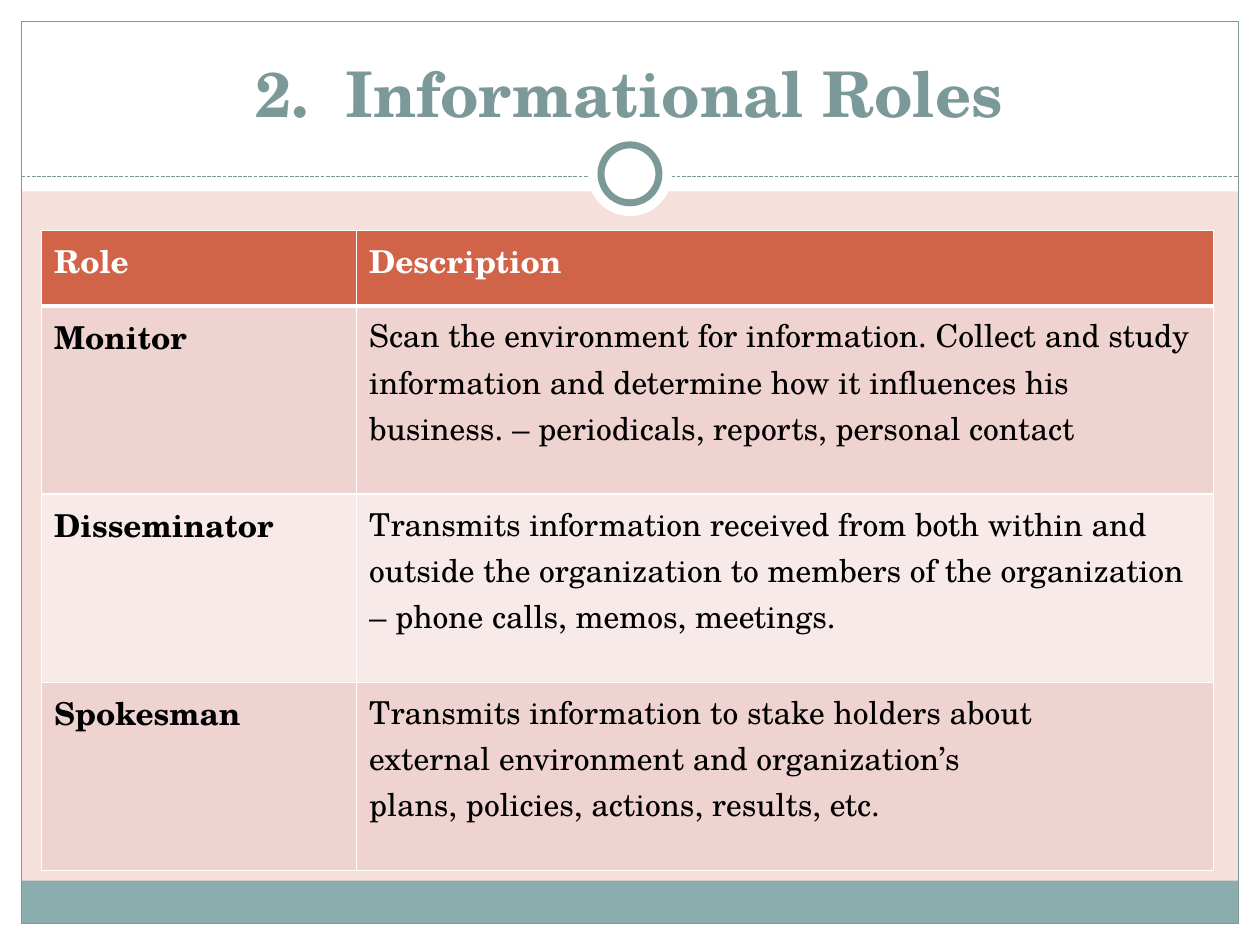
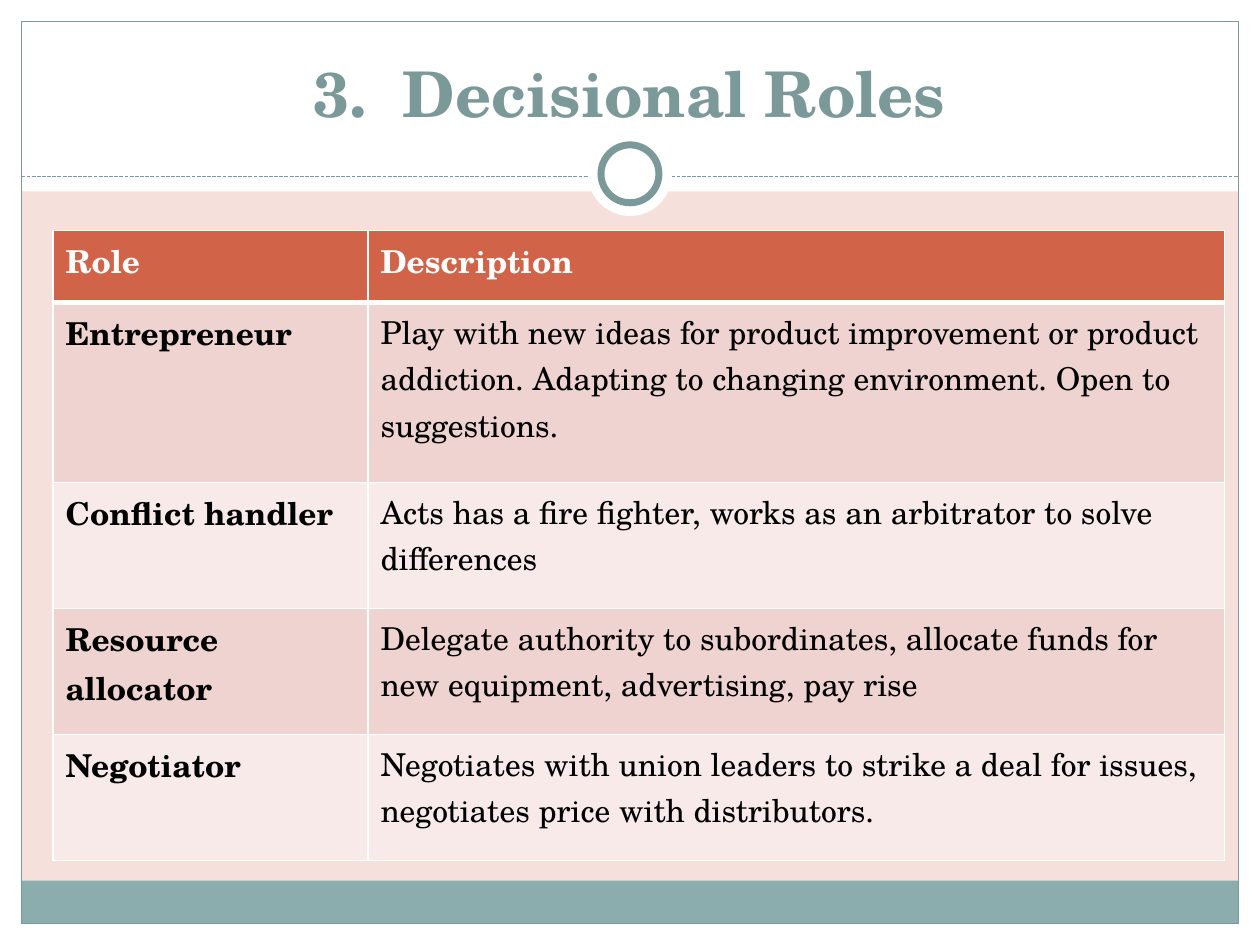
"""Build two table slides on managerial roles."""

from dataclasses import dataclass

import lxml.etree
import pptx
import pptx.dml.color
import pptx.enum.dml
import pptx.enum.shapes
import pptx.enum.text
import pptx.oxml
import pptx.oxml.ns
import pptx.util

SLIDES = [
    {
        "title": "2.  Informational Roles",
        "left": 0.33,
        "height": 5.08,
        "row_shares": (2, 5, 5, 5),
        "rows": [
            ("Role", ["Description"]),
            ("Monitor", ["Scan the environment for information. Collect and study information "
                         "and determine how it influences his business. – periodicals, reports, "
                         "personal contact"]),
            ("Disseminator", ["Transmits information received from both within and outside the "
                              "organization to members of the organization – phone calls, "
                              "memos, meetings."]),
            ("Spokesman", ["Transmits information to stake holders about",
                           "external environment and organization’s",
                           "plans, policies, actions, results, etc."]),
        ],
    },
    {
        "title": "3.  Decisional Roles",
        "left": 0.42,
        "height": 5,
        "row_shares": (4, 10, 7, 7, 7),
        "rows": [
            ("Role", ["Description"]),
            ("Entrepreneur", ["Play with new ideas for product improvement or product addiction. "
                              "Adapting to changing environment. Open to suggestions."]),
            ("Conflict handler", ["Acts has a fire fighter, works as an arbitrator to solve "
                                  "differences"]),
            ("Resource allocator", ["Delegate authority to subordinates, allocate funds for new "
                                    "equipment, advertising, pay rise"]),
            ("Negotiator", ["Negotiates with union leaders to strike a deal for issues, "
                            "negotiates price with distributors."]),
        ],
    },
]


@dataclass(frozen=True)
class Theme:
    font: str = "TeX Gyre Schola"
    title_size: int = 36
    table_size: int = 18
    background: str = "F6E0DB"
    white: str = "FFFFFF"
    black: str = "000000"
    accent: str = "7C999A"
    footer: str = "8CADAE"
    header: str = "D16349"
    bands: tuple = ("EED3D0", "F7EAE9")
    thin: float = 0.75
    ring: float = 4
    grid: float = 1
    header_rule: float = 3


THEME = Theme()
WIDTH, HEIGHT = 10, 7.5
MARGIN = 0.17
BAND_HEIGHT = 1.52
DIVIDER = 1.4
FOOTER_HEIGHT = 0.34
RING_CENTRE = 1.38
TITLE_BOX = (0.33, 0.25, 9.33, 0.83)
TABLE_TOP = 1.83
COLUMNS = (2.5, 6.8)


def inches(*lengths):
    return [pptx.util.Inches(length) for length in lengths]


def rgb(colour):
    return pptx.dml.color.RGBColor.from_string(colour)


def add_run(paragraph, text, size, colour, bold):
    run = paragraph.add_run()
    run.text = text
    run.font.name = THEME.font
    run.font.size = pptx.util.Pt(size)
    run.font.bold = bold
    run.font.color.rgb = rgb(colour)


def set_line(line, width):
    line.color.rgb = rgb(THEME.accent)
    line.width = pptx.util.Pt(width)


def add_plain_shape(slide, kind, box, fill=None, line_width=None):
    shape = slide.shapes.add_shape(kind, *inches(*box))
    shape.shadow.inherit = False
    if fill:
        shape.fill.solid()
        shape.fill.fore_color.rgb = rgb(fill)
    else:
        shape.fill.background()
    if line_width:
        set_line(shape.line, line_width)
    else:
        shape.line.fill.background()
    return shape


def add_divider(slide):
    connector = slide.shapes.add_connector(
        pptx.enum.shapes.MSO_CONNECTOR.STRAIGHT,
        *inches(MARGIN, DIVIDER, WIDTH - MARGIN, DIVIDER))
    set_line(connector.line, THEME.thin)
    connector.line.dash_style = pptx.enum.dml.MSO_LINE.SQUARE_DOT
    lxml.etree.SubElement(connector._element.spPr, pptx.oxml.ns.qn("a:effectLst"))
    return connector


def circle_box(diameter):
    return ((WIDTH - diameter) / 2, RING_CENTRE - diameter / 2, diameter, diameter)


def decorate_layout(layout, slide):
    """Draw the shared frame on a slide and move it to its layout."""
    rectangle = pptx.enum.shapes.MSO_SHAPE.RECTANGLE
    oval = pptx.enum.shapes.MSO_SHAPE.OVAL
    inner_width, bottom = WIDTH - 2 * MARGIN, HEIGHT - MARGIN
    white_bands = [
        (0, bottom, WIDTH, MARGIN),
        (0, 0, WIDTH, BAND_HEIGHT),
        (0, 0, MARGIN, HEIGHT),
        (WIDTH - MARGIN, 0, MARGIN, HEIGHT),
    ]
    footer = (MARGIN, bottom - FOOTER_HEIGHT, inner_width, FOOTER_HEIGHT)
    frame = (MARGIN, MARGIN, inner_width, HEIGHT - 2 * MARGIN)
    shapes = [add_plain_shape(slide, rectangle, box, THEME.white) for box in white_bands]
    shapes += [
        add_plain_shape(slide, rectangle, footer, THEME.footer),
        add_plain_shape(slide, rectangle, frame, line_width=THEME.thin),
        add_divider(slide),
        add_plain_shape(slide, oval, circle_box(0.67), THEME.white),
        add_plain_shape(slide, oval, circle_box(0.46), THEME.white, THEME.ring),
    ]
    for shape in shapes:
        layout.shapes._spTree.append(shape._element)
    layout.background.fill.solid()
    layout.background.fill.fore_color.rgb = rgb(THEME.background)


def write_title(slide, text):
    title = slide.shapes.title
    title.left, title.top, title.width, title.height = inches(*TITLE_BOX)
    frame = title.text_frame
    frame.word_wrap = True
    frame.auto_size = pptx.enum.text.MSO_AUTO_SIZE.NONE
    frame.vertical_anchor = pptx.enum.text.MSO_ANCHOR.BOTTOM
    paragraph = frame.paragraphs[0]
    paragraph.alignment = pptx.enum.text.PP_ALIGN.CENTER
    add_run(paragraph, text, THEME.title_size, THEME.accent, True)


def set_borders(cell, row_index):
    widths = {
        "lnL": THEME.grid,
        "lnR": THEME.grid,
        "lnT": THEME.header_rule if row_index == 1 else THEME.grid,
        "lnB": THEME.header_rule if row_index == 0 else THEME.grid,
    }
    properties = cell._tc.get_or_add_tcPr()
    for position, (side, width) in enumerate(widths.items()):
        properties.insert(position, pptx.oxml.parse_xml(
            f'<a:{side} {pptx.oxml.ns.nsdecls("a")} w="{pptx.util.Pt(width)}">'
            f'<a:solidFill><a:srgbClr val="{THEME.white}"/></a:solidFill></a:{side}>'))


def fill_cell(cell, lines, row_index, bold):
    is_header = row_index == 0
    cell.fill.solid()
    cell.fill.fore_color.rgb = rgb(THEME.header if is_header else THEME.bands[(row_index - 1) % 2])
    set_borders(cell, row_index)
    frame = cell.text_frame
    for index, line in enumerate(lines):
        paragraph = frame.add_paragraph() if index else frame.paragraphs[0]
        add_run(paragraph, line, THEME.table_size, THEME.white if is_header else THEME.black, bold)


def add_role_table(slide, content):
    rows, shares = content["rows"], content["row_shares"]
    box = inches(content["left"], TABLE_TOP, sum(COLUMNS), content["height"])
    table = slide.shapes.add_table(len(rows), len(COLUMNS), *box).table
    table.horz_banding = False
    for column, width in zip(table.columns, COLUMNS):
        column.width = pptx.util.Inches(width)
    for row_index, (role, description) in enumerate(rows):
        table.rows[row_index].height = pptx.util.Inches(
            content["height"] * shares[row_index] / sum(shares))
        fill_cell(table.cell(row_index, 0), [role], row_index, True)
        fill_cell(table.cell(row_index, 1), description, row_index, row_index == 0)


def main():
    presentation = pptx.Presentation()
    presentation.slide_width, presentation.slide_height = inches(WIDTH, HEIGHT)
    layout = presentation.slide_layouts.get_by_name("Title Only")
    for index, content in enumerate(SLIDES):
        slide = presentation.slides.add_slide(layout)
        if index == 0:
            decorate_layout(layout, slide)
        write_title(slide, content["title"])
        add_role_table(slide, content)
    presentation.save("out.pptx")


if __name__ == "__main__":
    main()
